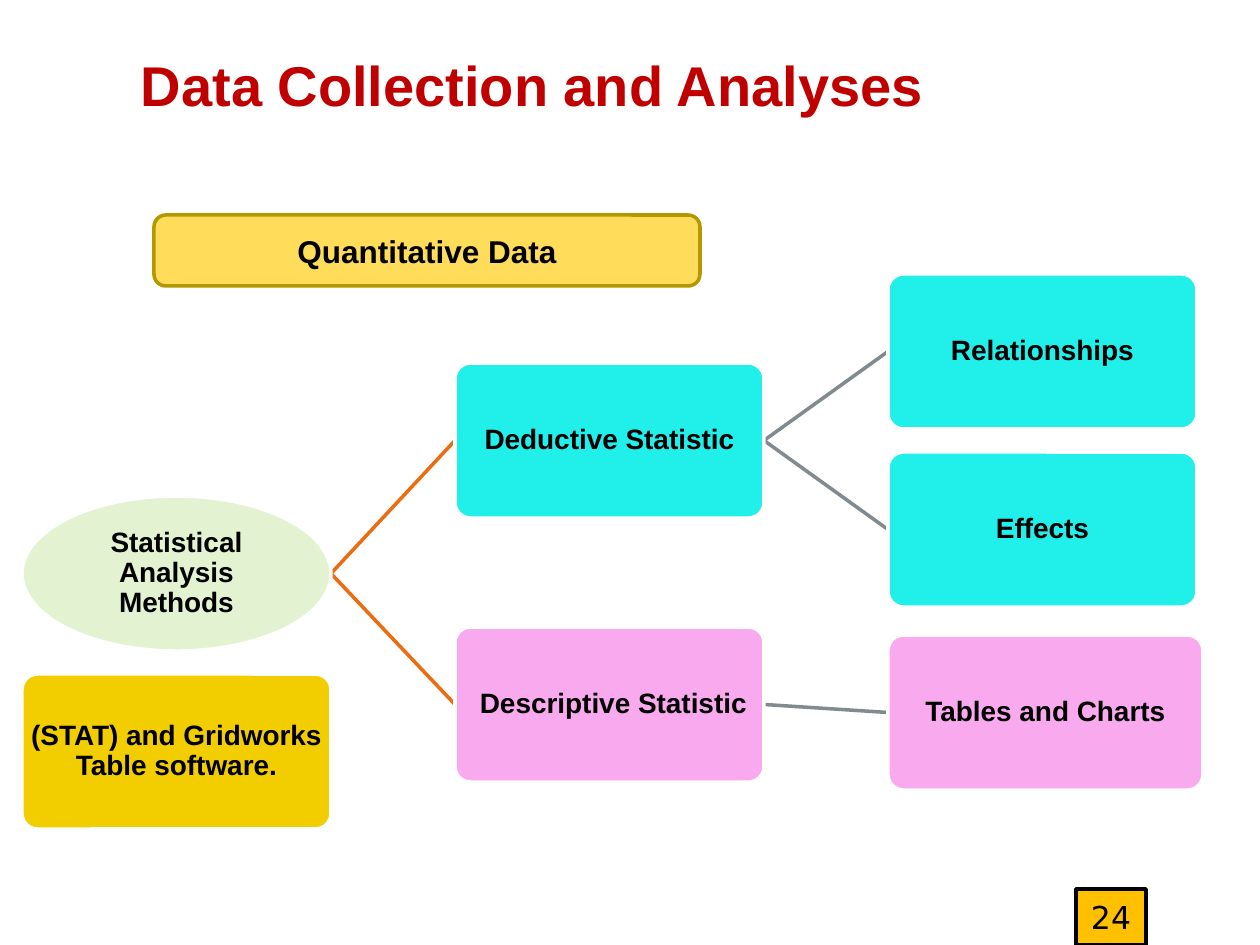
from lxml.etree import SubElement
from pptx import Presentation
from pptx.dml.color import RGBColor
from pptx.enum.shapes import MSO_CONNECTOR, MSO_SHAPE
from pptx.enum.text import MSO_ANCHOR, PP_ALIGN
from pptx.oxml.ns import qn
from pptx.util import Pt

PX = 914400 / 126
NODE_W, NODE_H = 309, 155
COLS = (22, 455, 888)
CYAN, PINK, ORANGE, GRAY = "21EFEA", "F9A9EE", "EC6C10", "818A8F"
NODES = {
    "methods": (0, 496, NODE_W, "E3F3D1", "Statistical Analysis\vMethods"),
    "deductive": (1, 363, NODE_W, CYAN, "Deductive Statistic"),
    "relationships": (2, 274, NODE_W, CYAN, "Relationships"),
    "effects": (2, 452, NODE_W, CYAN, "Effects"),
    "descriptive": (1, 627, NODE_W, PINK, " Descriptive Statistic"),
    "charts": (2, 635, 315, PINK, "Tables and Charts"),
    "software": (0, 674, NODE_W, "F2CE00", "(STAT) and Gridworks Table software."),
}
LINKS = (
    ("methods", "deductive", ORANGE),
    ("methods", "descriptive", ORANGE),
    ("deductive", "relationships", GRAY),
    ("deductive", "effects", GRAY),
    ("descriptive", "charts", GRAY),
)


def emu(*lengths):
    """Turn px lengths into EMU."""
    return [round(n * PX) for n in lengths]


def color(hex_code):
    """Turn a hex string into a colour."""
    return RGBColor.from_string(hex_code)


def write(sp, text, size, ink="000000", font="Arial", bold=True, spacing=None, insets=None):
    """Write one centred paragraph into a shape."""
    tf = sp.text_frame
    tf.word_wrap = True
    tf.vertical_anchor = MSO_ANCHOR.MIDDLE
    for side, n in (insets or {}).items():
        setattr(tf, f"margin_{side}", emu(n)[0])
    p = tf.paragraphs[0]
    p.text = text
    p.alignment = PP_ALIGN.CENTER
    p.line_spacing = spacing
    for name, value in {"name": font, "size": Pt(size), "bold": bold}.items():
        setattr(p.font, name, value)
    p.font.color.rgb = color(ink)


def add_box(slide, kind, box, fill, line):
    """Add a flat filled shape with a 2 pt outline."""
    sp = slide.shapes.add_shape(kind, *emu(*box))
    sp.shadow.inherit = False
    sp.fill.solid()
    sp.fill.fore_color.rgb = color(fill)
    sp.line.color.rgb = color(line)
    sp.line.width = Pt(2)
    return sp


def add_title(slide, x, y, w, h):
    """Place the slide title."""
    sp = slide.shapes.add_textbox(*emu(x, y, w, h))
    write(sp, "Data Collection and Analyses", 32, "C00000",
          insets={"left": 76, "right": 13, "top": 44, "bottom": 0})
    sp.text_frame.vertical_anchor = MSO_ANCHOR.TOP


def add_link(slide, x1, y1, x2, y2, line):
    """Join two points with a straight line."""
    link = slide.shapes.add_connector(MSO_CONNECTOR.STRAIGHT, *emu(x1, y1, x2, y2))
    link.line.color.rgb = color(line)
    link.line.width = Pt(2)
    SubElement(link._element.spPr, qn("a:effectLst"))


def add_tree(slide, x, y):
    """Place the methods tree, links first, from its top left corner."""
    boxes = {
        key: (x + COLS[col], y + top, w, NODE_H)
        for key, (col, top, w, _, _) in NODES.items()
    }
    for start, end, line in LINKS:
        left, top, w, h = boxes[start]
        to_left, to_top, _, to_h = boxes[end]
        add_link(slide, left + w, top + h / 2, to_left, to_top + to_h / 2, line)
    for key, (_, _, _, fill, text) in NODES.items():
        kind = MSO_SHAPE.OVAL if key == "methods" else MSO_SHAPE.ROUNDED_RECTANGLE
        sp = add_box(slide, kind, boxes[key], fill, "FFFFFF")
        if key != "methods":
            sp.adjustments[0] = 0.1
        write(sp, text, 16, spacing=0.9,
              insets=dict.fromkeys(("left", "right", "top", "bottom"), 1))


def add_heading(slide, *box):
    """Place the data type heading."""
    sp = add_box(slide, MSO_SHAPE.ROUNDED_RECTANGLE, box, "FFDC59", "B39800")
    write(sp, "Quantitative Data", 18)


def add_number(slide, *box):
    """Place the slide number."""
    sp = add_box(slide, MSO_SHAPE.RECTANGLE, box, "FFC000", "000000")
    write(sp, "24", 18, font="DejaVu Sans", bold=False)


def main():
    """Build and save the slide."""
    prs = Presentation()
    prs.slide_width, prs.slide_height = emu(1260, 945)
    slide = prs.slides.add_slide(prs.slide_layouts[6])
    add_title(slide, 5, 6, 992, 106)
    add_tree(slide, 0, 0)
    add_heading(slide, 154, 215, 546, 71)
    add_number(slide, 1076, 889, 70, 56)
    prs.save("out.pptx")


if __name__ == "__main__":
    main()
